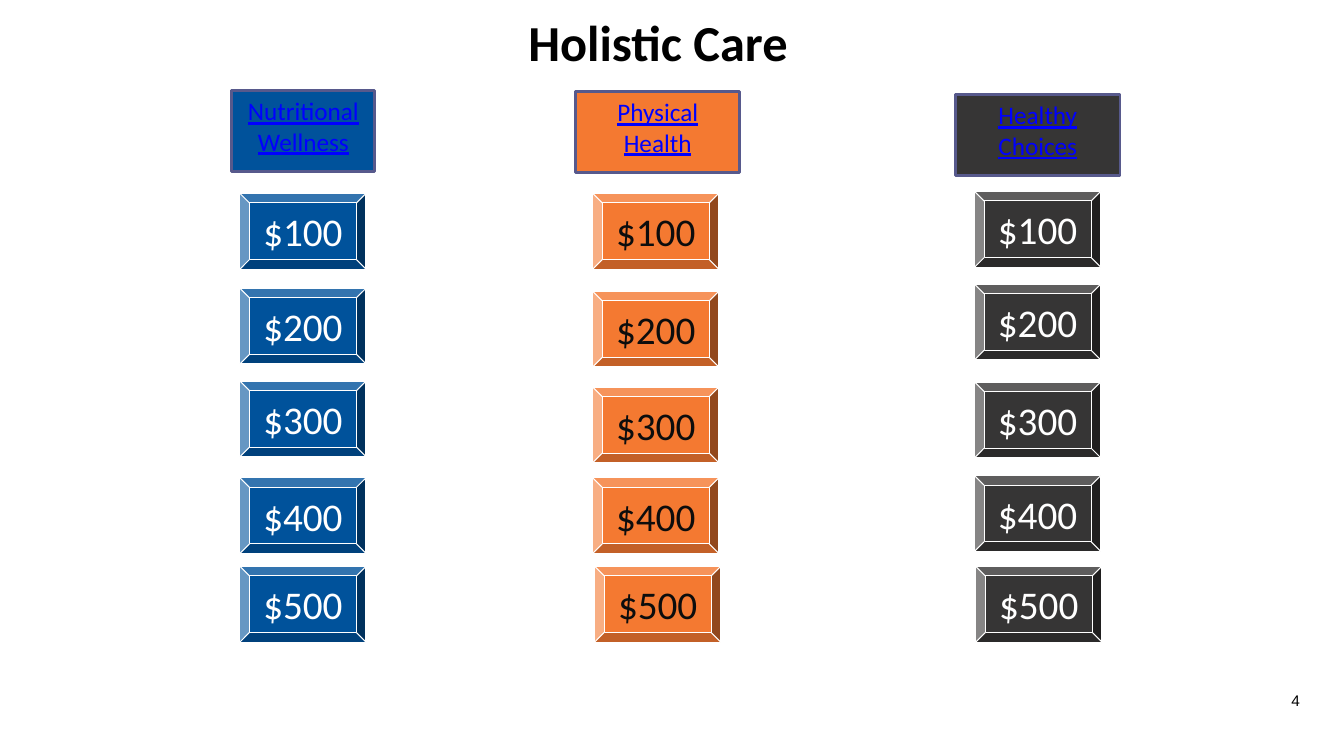
"""Build the Holistic Care quiz board slide."""
from pptx import Presentation
from pptx.dml.color import RGBColor as Rgb
from pptx.enum.shapes import MSO_SHAPE as Kind
from pptx.enum.text import MSO_ANCHOR as Anchor, PP_ALIGN as Align
from pptx.util import Pt

HUES = {
    "blue": "00529B", "orange": "F47931", "dark": "363535", "edge": "57598C",
    "link": "0000FF", "white": "FFFFFF", "ink": "0D0D0D", "black": "000000",
}
PRIZES = ["$100", "$200", "$300", "$400", "$500"]
TILE = (90, 54)
BOARD = [
    ("Nutritional Wellness", "blue", "white", (165.6, 64.8, 102.2, 57.6),
     171.4, 171.4, (138.2, 205.9, 272.2, 341.3, 404.6)),
    ("Physical Health", "orange", "ink", (411.1, 65.5, 117.4, 57.6),
     423.4, 424.8, (138.2, 208.1, 276.5, 341.3, 404.6)),
    ("Healthy Choices", "dark", "white", (682.6, 67.7, 117.4, 57.6),
     696.2, 697, (136.8, 203, 272.9, 339.8, 404.6)),
]


def hue(name):
    return Rgb.from_string(HUES[name])


def write(shape, text, size, color, face="Calibri", bold=False,
          under=False, anchor=Anchor.TOP, pad=(7.2, 3.6)):
    frame = shape.text_frame
    frame.word_wrap = True
    frame.vertical_anchor = anchor
    frame.margin_left = frame.margin_right = Pt(pad[0])
    frame.margin_top = frame.margin_bottom = Pt(pad[1])
    para = frame.paragraphs[0]
    para.alignment = Align.CENTER
    run = para.add_run()
    run.text = text
    font = run.font
    font.name, font.size = face, Pt(size)
    font.bold, font.underline = bold, under
    font.color.rgb = hue(color)


def add_text(slide, box, text, size, color, **style):
    shape = slide.shapes.add_textbox(*map(Pt, box))
    write(shape, text, size, color, **style)


def add_box(slide, kind, box, fill, edge, width):
    shape = slide.shapes.add_shape(kind, *map(Pt, box))
    shape.shadow.inherit = False
    shape.fill.solid()
    shape.fill.fore_color.rgb = hue(fill)
    shape.line.color.rgb = hue(edge)
    shape.line.width = Pt(width)
    return shape


def add_head(slide, box, text, fill):
    shape = add_box(slide, Kind.RECTANGLE, box, fill, "edge", 2)
    write(shape, text, 18, "link", under=True)


def add_tile(slide, left, top, text, fill, color):
    shape = add_box(slide, Kind.BEVEL, (left, top, *TILE), fill, "white", 0.75)
    shape.adjustments[0] = 0.125
    write(shape, text, 28, color, anchor=Anchor.MIDDLE)


def main():
    deck = Presentation()
    deck.slide_width, deck.slide_height = Pt(960), Pt(540)
    slide = deck.slides.add_slide(deck.slide_layouts[6])
    add_text(slide, (159.8, 4.3, 620.6, 51.1), "Holistic Care", 36, "black",
             bold=True)
    for topic, fill, color, box, left, last, tops in BOARD:
        add_head(slide, box, topic, fill)
        for prize, top in zip(PRIZES, tops):
            side = last if prize == PRIZES[-1] else left
            add_tile(slide, side, top, prize, fill, color)
    add_text(slide, (915.8, 491, 19.4, 18.7), "4", 11, "black",
             face="Arial", pad=(2.9, 2.9))
    deck.save("out.pptx")


if __name__ == "__main__":
    main()
